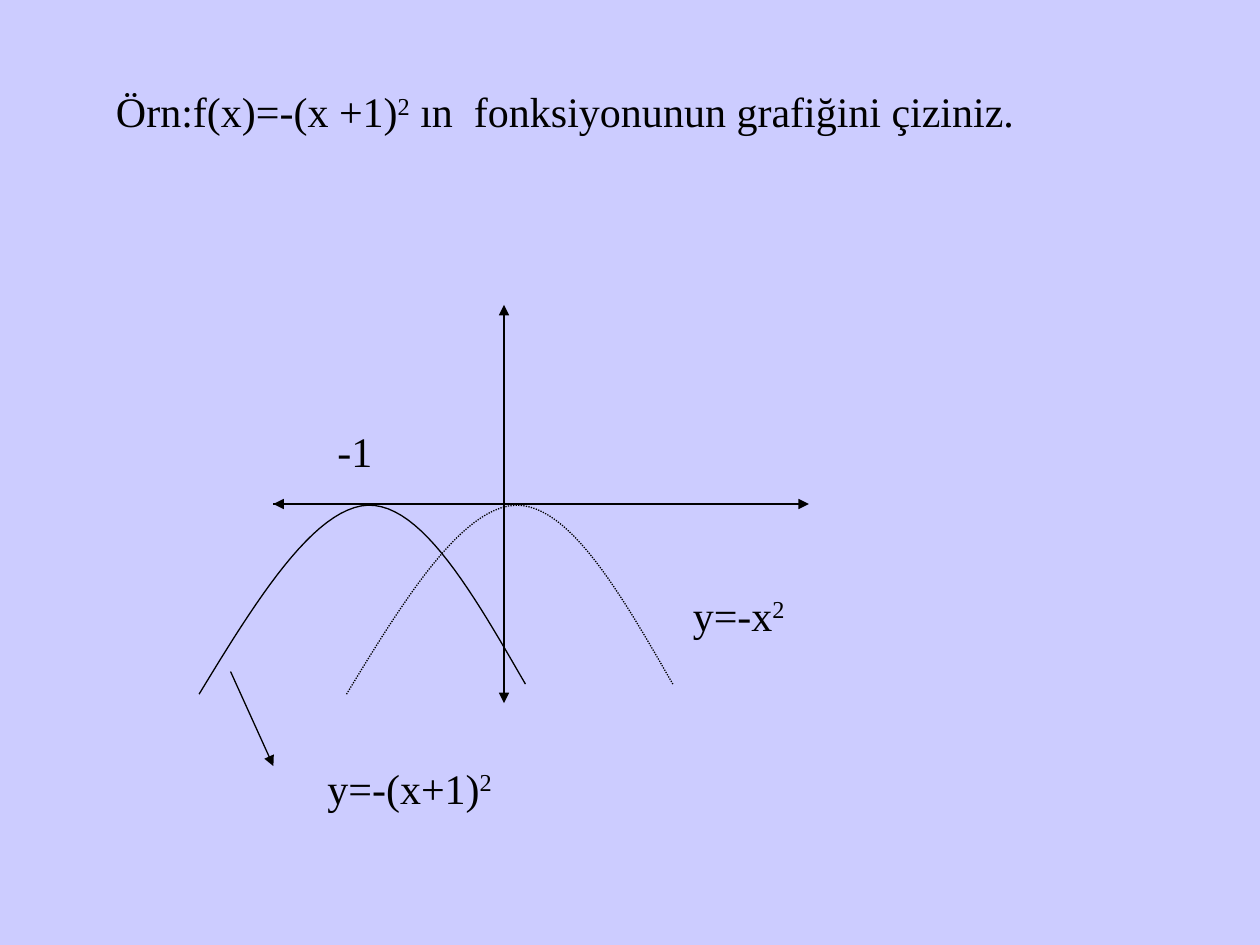
import dataclasses

import pptx
import pptx.dml.color
import pptx.enum.dml
import pptx.enum.shapes
import pptx.enum.text
import pptx.oxml.ns
import pptx.util
from lxml import etree
from pptx.util import Inches


@dataclasses.dataclass(frozen=True)
class Theme:
    background: pptx.dml.color.RGBColor = pptx.dml.color.RGBColor(0xCC, 0xCC, 0xFF)
    ink: pptx.dml.color.RGBColor = pptx.dml.color.RGBColor(0, 0, 0)
    font: str = "Times New Roman"
    text_size: pptx.util.Length = pptx.util.Pt(24)
    line_width: pptx.util.Length = pptx.util.Pt(0.75)


THEME = Theme()
SUPERSCRIPT = "30000"
CURVE_STEPS = 24

ARROWS = [
    ((4, 2.58), (4, 5.58)),
    ((2.17, 4), (6.42, 4)),
    ((2.5, 4), (2.17, 4)),
    ((4, 2.75), (4, 2.42)),
    ((1.83, 5.33), (2.17, 6.08)),
]
PARABOLA_START = (0, 1.51)
PARABOLA_ARCS = [
    ((0.45, 0.77), (0.91, 0.03), (1.34, 0.01)),
    ((1.77, 0), (2.18, 0.72), (2.59, 1.43)),
]
LABELS = [
    (("-1",), (2.58, 3.33, 0.67, 0.5), True),
    (("y=-(x+1)", "2"), (2.5, 6, 2.08, 0.5), True),
    (("y=-x", "2"), (5.4, 4.63, 0.94, 0.5), False),
]


def write_formula(box, parts, wrap):
    frame = box.text_frame
    frame.word_wrap = wrap
    frame.auto_size = pptx.enum.text.MSO_AUTO_SIZE.SHAPE_TO_FIT_TEXT
    frame.vertical_anchor = pptx.enum.text.MSO_ANCHOR.TOP
    paragraph = frame.paragraphs[0]
    paragraph.alignment = pptx.enum.text.PP_ALIGN.LEFT
    paragraph.font.name = THEME.font
    paragraph.font.size = THEME.text_size
    paragraph.font.color.rgb = THEME.ink
    for index, part in enumerate(parts):
        run = paragraph.add_run()
        run.text = part
        if index % 2:
            run._r.get_or_add_rPr().set("baseline", SUPERSCRIPT)


def set_title(slide, parts, bounds):
    title = slide.shapes.title
    title.left, title.top, title.width, title.height = map(Inches, bounds)
    write_formula(title, parts, False)


def add_label(slide, parts, bounds, wrap):
    label = slide.shapes.add_textbox(*map(Inches, bounds))
    write_formula(label, parts, wrap)


def style_line(line):
    line.color.rgb = THEME.ink
    line.width = THEME.line_width


def add_arrow(slide, start, end):
    arrow = slide.shapes.add_connector(
        pptx.enum.shapes.MSO_CONNECTOR.STRAIGHT, *map(Inches, start + end))
    style_line(arrow.line)
    qn = pptx.oxml.ns.qn
    etree.SubElement(arrow.line._get_or_add_ln(), qn("a:tailEnd"), type="triangle")
    etree.SubElement(arrow._element.spPr, qn("a:effectLst"))


def arc_points(start, first, second, end):
    for step in range(1, CURVE_STEPS + 1):
        t = step / CURVE_STEPS
        weights = ((1 - t) ** 3, 3 * t * (1 - t) ** 2, 3 * t * t * (1 - t), t ** 3)
        yield tuple(
            sum(weight * value for weight, value in zip(weights, axis))
            for axis in zip(start, first, second, end))


def add_parabola(slide, left, top, dash=None):
    points = [PARABOLA_START]
    for arc in PARABOLA_ARCS:
        points.extend(arc_points(points[-1], *arc))
    start, *rest = [(Inches(left + x), Inches(top + y)) for x, y in points]
    builder = slide.shapes.build_freeform(*start)
    builder.add_line_segments(rest, close=False)
    parabola = builder.convert_to_shape()
    parabola.shadow.inherit = False
    parabola.fill.background()
    style_line(parabola.line)
    if dash is not None:
        parabola.line.dash_style = dash


def main():
    presentation = pptx.Presentation()
    presentation.slide_width = Inches(10)
    presentation.slide_height = Inches(7.5)
    slide = presentation.slides.add_slide(presentation.slide_layouts[5])
    slide.background.fill.solid()
    slide.background.fill.fore_color.rgb = THEME.background

    set_title(
        slide,
        ("Örn:f(x)=-(x +1)", "2", " ın  fonksiyonunun grafiğini çiziniz."),
        (0.82, 0.63, 7.34, 0.5))
    for start, end in ARROWS:
        add_arrow(slide, start, end)
    add_parabola(slide, 1.58, 4)
    add_parabola(slide, 2.75, 4, pptx.enum.dml.MSO_LINE.ROUND_DOT)
    for parts, bounds, wrap in LABELS:
        add_label(slide, parts, bounds, wrap)

    presentation.save("out.pptx")


if __name__ == "__main__":
    main()
